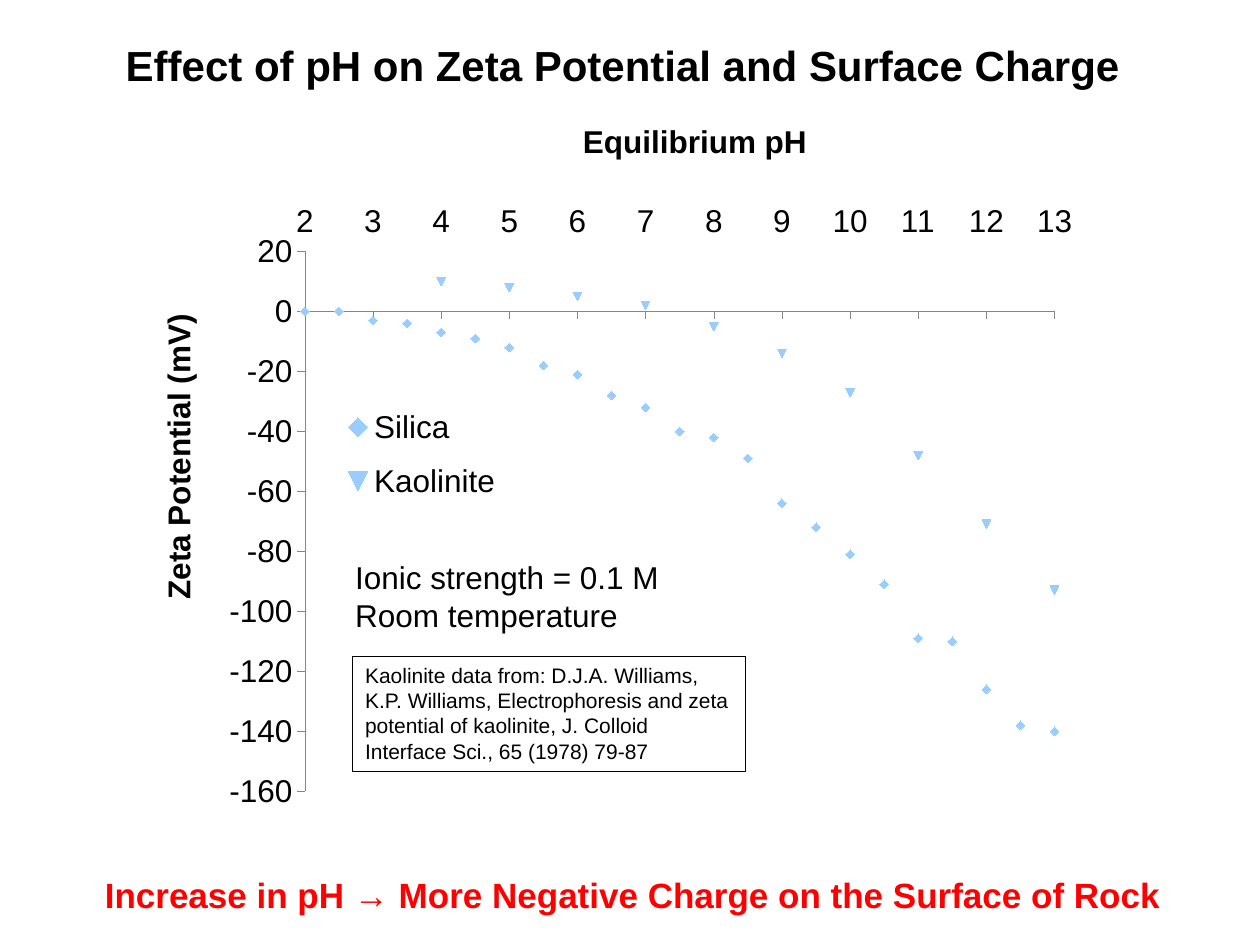
from lxml.etree import SubElement as Sub
from pptx import Presentation
from pptx.chart.data import XyChartData
from pptx.dml.color import RGBColor
from pptx.enum.chart import (XL_CHART_TYPE as Kind, XL_LEGEND_POSITION as Side,
                             XL_MARKER_STYLE as Mark, XL_TICK_LABEL_POSITION as Spot,
                             XL_TICK_MARK as Tick)
from pptx.enum.shapes import MSO_SHAPE as Form
from pptx.enum.text import MSO_ANCHOR as Anchor, PP_ALIGN as Align
from pptx.oxml.ns import qn
from pptx.util import Cm, Pt

SILICA = [0, 0, -3, -4, -7, -9, -12, -18, -21, -28, -32, -40, -42, -49, -64,
          -72, -81, -91, -109, -110, -126, -138, -140]
KAOLIN = [None, None, 10, None, 8, None, 5, None, 2, None, -5, None, -14, None, -27,
          None, -48, None, -71, None, -93]
SOURCE = ("Kaolinite data from: D.J.A. Williams, K.P. Williams, Electrophoresis and zeta "
          "potential of kaolinite, J. Colloid Interface Sci., 65 (1978) 79-87")


def put(obj, **vals):
    """Set each named value on an object."""
    for key, val in vals.items():
        setattr(obj, key, val)


def tint(text):
    """Turn a hex string into a colour."""
    return RGBColor.from_string(text)


def style(font, size, bold=False, color="000000"):
    """Format a font in Arial."""
    put(font, name="Arial", size=Pt(size), bold=bold)
    font.color.rgb = tint(color)


def write(shape, lines, size, bold=False, color="000000", align=Align.LEFT, space=None):
    """Fill a shape with wrapped lines of text."""
    frame = shape.text_frame
    put(frame, text="\n".join(lines), word_wrap=True, vertical_anchor=Anchor.TOP)
    for para in frame.paragraphs:
        put(para, alignment=align, line_spacing=space)
        style(para.runs[0].font, size, bold, color)


def title(slide, text):
    """Place and format the slide title."""
    head = slide.shapes.title
    put(head, left=Cm(2.28), top=Cm(-0.34), width=Cm(20.83), height=Cm(1.27))
    write(head, [text], 24, bold=True, space=2.0)


def label(slide, box, lines, size, **look):
    """Add a plain text box."""
    write(slide.shapes.add_textbox(*map(Cm, box)), lines, size, **look)


def frame(slide, box, text):
    """Add an outlined box for the data source."""
    rect = slide.shapes.add_shape(Form.RECTANGLE, *map(Cm, box))
    rect.shadow.inherit = False
    rect.fill.background()
    rect.line.color.rgb = tint("000000")
    rect.line.width = Pt(0.75)
    write(rect, [text], 12)


def place(node, spot, after=None, inner=False):
    """Give a chart part a manual layout in percent of the chart."""
    for old in node.findall(qn("c:layout")):
        node.remove(old)
    lay = Sub(node, qn("c:layout"))
    node.insert(0 if after is None else node.index(node.find(qn(after))) + 1, lay)
    man = Sub(lay, qn("c:manualLayout"))
    pairs = [("layoutTarget", "inner")] if inner else []
    pairs += [("xMode", "edge"), ("yMode", "edge")]
    pairs += [(key, round(part / 100, 4)) for key, part in zip("xywh", spot)]
    for key, val in pairs:
        Sub(man, qn("c:" + key)).set("val", str(val))


def scale(axis, text, spot, low, high, step):
    """Set the range, look and title of an axis."""
    put(axis, minimum_scale=low, maximum_scale=high, major_unit=step,
        has_major_gridlines=False, major_tick_mark=Tick.OUTSIDE,
        minor_tick_mark=Tick.NONE, has_title=True)
    axis.format.line.color.rgb = tint("868686")
    axis.format.line.width = Pt(0.25)
    axis.tick_labels.number_format = "General"
    axis.tick_labels.number_format_is_linked = False
    style(axis.tick_labels.font, 18)
    name = axis.axis_title
    name.text_frame.text = text
    style(name.text_frame.paragraphs[0].runs[0].font, 18, bold=True)
    place(name._element, spot, "c:tx")


def clear(row):
    """Drop the points of a series that have no value."""
    for point in list(row._element.iter(qn("c:pt"))):
        if point.find(qn("c:v")).text == "None":
            point.getparent().remove(point)


def plot(slide, box):
    """Add the scatter chart of zeta potential against pH."""
    data = XyChartData()
    for name, start, vals in (("Silica", 2, SILICA), ("Kaolinite", 3, KAOLIN)):
        row = data.add_series(name)
        for i, val in enumerate(vals):
            row.add_data_point(start + i / 2, val)
    chart = slide.shapes.add_chart(Kind.XY_SCATTER, *map(Cm, box), data).chart
    put(chart, has_title=False, has_legend=True)
    style(chart.font, 10)
    scale(chart.category_axis, "Equilibrium pH", (44.5, 2.6), 2, 13, 1)
    scale(chart.value_axis, "Zeta Potential (mV)", (0.5, 29), -160, 20, 20)
    chart.category_axis.tick_label_position = Spot.HIGH
    put(chart.legend, position=Side.RIGHT, include_in_layout=False)
    style(chart.legend.font, 18)
    place(chart.legend._element, (17.4, 40.2, 22, 17.2), "c:legendPos")
    place(chart.plots[0]._element.getparent(), (16.3, 21.2, 77.6, 73.5), inner=True)
    chart.plots[0].vary_by_categories = False
    for row in chart.plots[0].series:
        clear(row)
        row.smooth = False
        row.format.line.fill.background()
        put(row.marker, style=Mark.AUTOMATIC, size=5)
        fill = row.marker.format.fill
        fill.solid()
        fill.fore_color.rgb = tint("99CCFF")
        row.marker.format.line.fill.background()


def main():
    """Build the slide and save it."""
    deck = Presentation()
    put(deck, slide_width=Cm(25.4), slide_height=Cm(19.05))
    slide = deck.slides.add_slide(deck.slide_layouts[5])
    title(slide, "Effect of pH on Zeta Potential and Surface Charge")
    label(slide, (1.23, 17.48, 23.06, 1.12),
          ["Increase in pH → More Negative Charge on the Surface of Rock"],
          20, bold=True, color="FF0000", align=Align.CENTER)
    plot(slide, (2.97, 1.93, 19.48, 14.81))
    label(slide, (6.91, 11.13, 7.82, 1.8),
          ["Ionic strength = 0.1 M", "Room temperature"], 18)
    frame(slide, (7.11, 13.23, 7.92, 2.32), SOURCE)
    deck.save("out.pptx")


if __name__ == "__main__":
    main()
